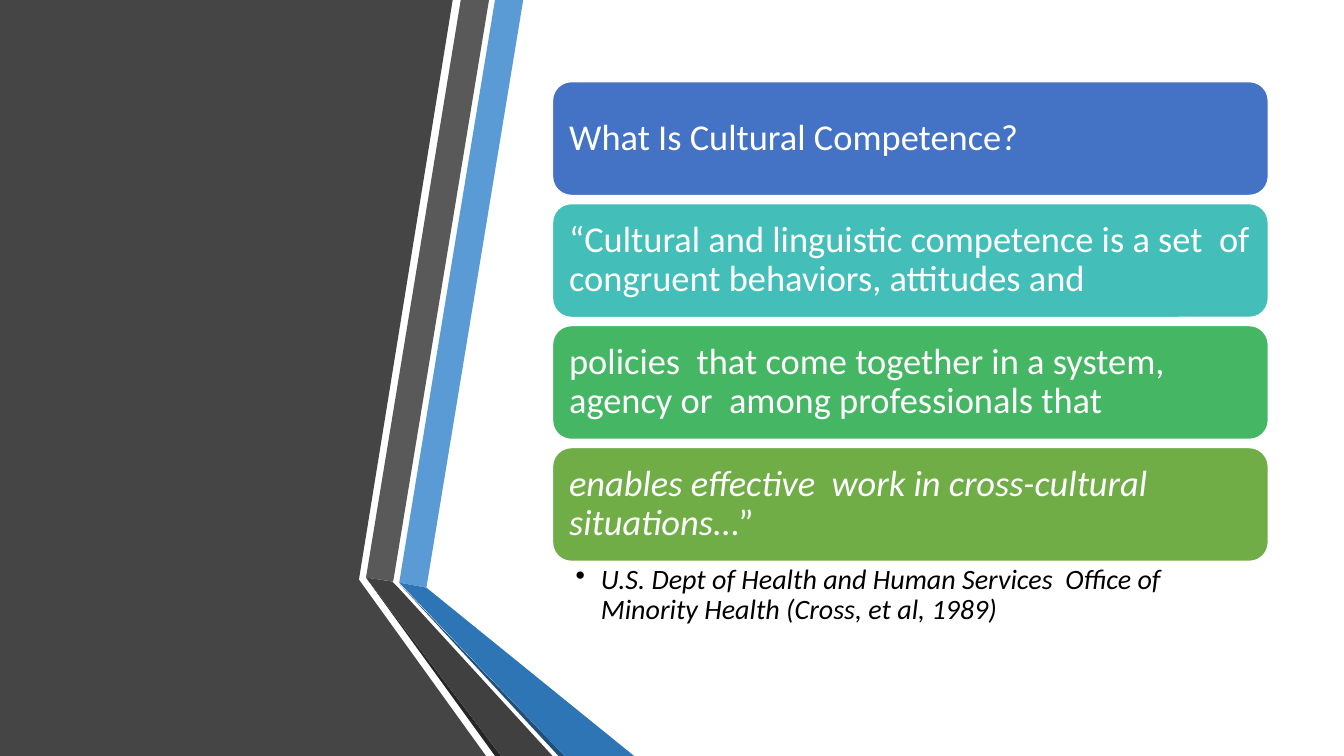
from lxml.etree import SubElement
from pptx import Presentation
from pptx.dml.color import RGBColor
from pptx.enum.shapes import MSO_SHAPE as Preset
from pptx.enum.text import MSO_ANCHOR as Anchor, PP_ALIGN as Align
from pptx.oxml.ns import qn
from pptx.util import Inches, Pt

FONT = "Calibri"

# Decorative bands: colour and outline points in inches, back to front
BANDS = [
    ("454545", [(0, 0), (4.49, 0), (3.56, 5.75), (4.82, 7.5), (0, 7.5)]),
    ("5B9BD5", [(3.96, 5.78), (4.23, 5.83), (5.19, 0), (4.91, 0)]),
    ("595959", [(4.85, 0), (4.57, 0), (3.63, 5.73), (3.9, 5.77)]),
    ("262626", [(3.63, 5.73), (4.91, 7.5), (4.97, 7.5)]),
    ("1F4E79", [(3.96, 5.79), (5.54, 7.5), (5.6, 7.5)]),
    ("2E75B6", [(3.96, 5.78), (5.6, 7.5), (6.29, 7.5), (4.23, 5.83)]),
    ("404040", [(5.48, 7.5), (3.95, 5.83), (3.89, 5.77), (3.63, 5.73), (4.97, 7.5)]),
]

# Cards: fill colour and runs of (text, italic)
CARDS = [
    ("4472C4", [("What Is Cultural Competence?", False)]),
    ("43BEB9", [("“Cultural and linguistic competence is a set  of congruent "
                 "behaviors, attitudes and", False)]),
    ("45B664", [("policies  that come together in a system, agency or  among "
                 "professionals that", False)]),
    ("70AD47", [("enables effective  work in cross-cultural situations", True),
                ("…”", False)]),
]
SOURCE = ("U.S. Dept of Health and Human Services  Office of Minority Health "
          "(Cross, et al, 1989)")


def color(value):
    return RGBColor.from_string(value)


def set_insets(frame, left, top, right, bottom):
    frame.margin_left, frame.margin_top = Inches(left), Inches(top)
    frame.margin_right, frame.margin_bottom = Inches(right), Inches(bottom)
    frame.word_wrap = True


def style_paragraph(paragraph, size, font_color):
    paragraph.alignment = Align.LEFT
    paragraph.line_spacing = 0.9
    paragraph.font.name = FONT
    paragraph.font.size = Pt(size)
    paragraph.font.color.rgb = color(font_color)


def add_bands(slide):
    for fill, points in BANDS:
        outline = [(Inches(x), Inches(y)) for x, y in points]
        builder = slide.shapes.build_freeform(*outline[0])
        builder.add_line_segments(outline[1:], close=True)
        shape = builder.convert_to_shape()
        shape.shadow.inherit = False
        shape.fill.solid()
        shape.fill.fore_color.rgb = color(fill)
        shape.line.fill.background()


def add_card(slide, left, top, width, height, fill, runs):
    shape = slide.shapes.add_shape(Preset.ROUNDED_RECTANGLE, Inches(left),
                                   Inches(top), Inches(width), Inches(height))
    shape.shadow.inherit = False
    shape.fill.solid()
    shape.fill.fore_color.rgb = color(fill)
    shape.line.color.rgb = color("FFFFFF")
    shape.line.width = Pt(1)
    frame = shape.text_frame
    set_insets(frame, 0.11, 0.11, 0.11, 0.11)
    frame.vertical_anchor = Anchor.MIDDLE
    paragraph = frame.paragraphs[0]
    style_paragraph(paragraph, 26, "FFFFFF")
    for text, italic in runs:
        run = paragraph.add_run()
        run.text = text
        run.font.italic = italic


def add_source(slide, left, top, width, height):
    box = slide.shapes.add_textbox(Inches(left), Inches(top),
                                   Inches(width), Inches(height))
    frame = box.text_frame
    set_insets(frame, 0.23, 0.04, 0.2, 0.04)
    paragraph = frame.paragraphs[0]
    paragraph.text = SOURCE
    style_paragraph(paragraph, 20, "000000")
    paragraph.font.italic = True
    # Hanging bullet, placed before the default run properties
    properties = paragraph._p.get_or_add_pPr()
    properties.set("marL", str(Inches(0.25)))
    properties.set("indent", str(-Inches(0.25)))
    bullet = SubElement(properties, qn("a:buChar"), char="•")
    properties.find(qn("a:defRPr")).addprevious(bullet)


def add_definition(slide, left, top, width, card_height=1.11, gap=0.1):
    """Stack the cards downwards and put the source under the last one."""
    for index, (fill, runs) in enumerate(CARDS):
        card_top = top + index * (card_height + gap)
        add_card(slide, left, card_top, width, card_height, fill, runs)
    add_source(slide, left, card_top + card_height, width, 0.69)


def main():
    presentation = Presentation()
    presentation.slide_width = Inches(13.33)
    presentation.slide_height = Inches(7.5)
    slide = presentation.slides.add_slide(presentation.slide_layouts[6])
    add_bands(slide)
    add_definition(slide, left=5.48, top=0.81, width=7.1, card_height=1.13, gap=0.08)
    presentation.save("out.pptx")


if __name__ == "__main__":
    main()
